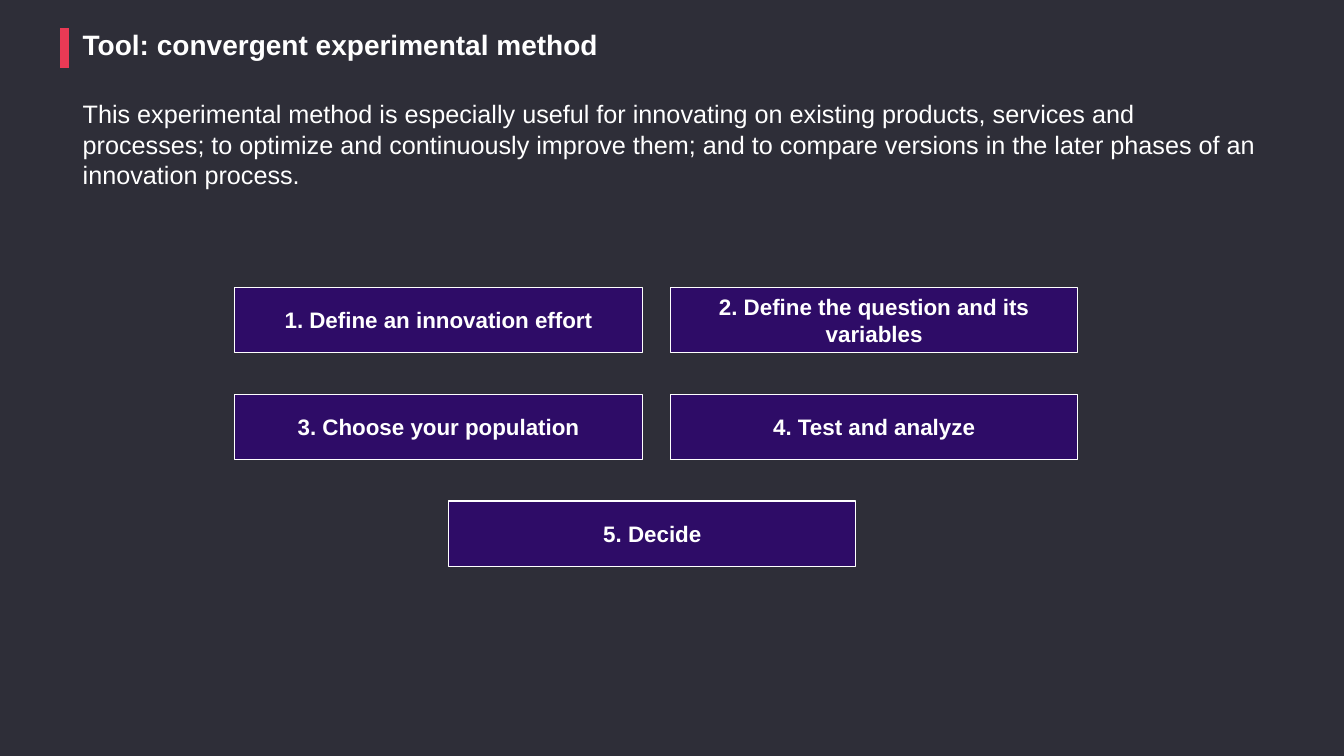
from dataclasses import dataclass

from lxml.etree import SubElement
from pptx import Presentation
from pptx.dml.color import RGBColor
from pptx.enum.shapes import MSO_CONNECTOR, MSO_SHAPE
from pptx.enum.text import MSO_ANCHOR as ANCHOR, MSO_AUTO_SIZE as AUTO, PP_ALIGN as ALIGN
from pptx.oxml.ns import qn
from pptx.util import Inches, Pt

BACKGROUND, ACCENT, PURPLE, WHITE = "2E2E38", "EA3A55", "2E0C67", "FFFFFF"
STEP_W, STEP_H = 4.04, 0.65
LEFT_COL, RIGHT_COL, MIDDLE = 2.33, 6.65, 4.45
FIRST_ROW, ROW_PITCH = 2.85, 1.06


@dataclass
class Step:
    text: str
    left: float
    row: int


STEPS = [
    Step("1. Define an innovation effort", LEFT_COL, 0),
    Step("2. Define the question and its variables", RIGHT_COL, 0),
    Step("3. Choose your population", LEFT_COL, 1),
    Step("4. Test and analyze", RIGHT_COL, 1),
    Step("5. Decide", MIDDLE, 2),
]


def paint(color_format, color: str) -> None:
    color_format.rgb = RGBColor.from_string(color)


def fill_solid(fill, color: str) -> None:
    fill.solid()
    paint(fill.fore_color, color)


def write(sp, text: str, *, size: float, bold: bool = False,
          align=ALIGN.LEFT, anchor=ANCHOR.TOP) -> None:
    tf = sp.text_frame
    tf.word_wrap = True
    tf.auto_size = AUTO.NONE
    tf.vertical_anchor = anchor
    p = tf.paragraphs[0]
    p.alignment = align
    p.space_before = Pt(0)
    r = p.add_run()
    r.text = text
    r.font.name = "Arial"
    r.font.size = Pt(size)
    r.font.bold = bold
    paint(r.font.color, WHITE)


def place(sp, left: float, top: float, width: float, height: float) -> None:
    sp.left, sp.top = Inches(left), Inches(top)
    sp.width, sp.height = Inches(width), Inches(height)


def remove_bullet(p) -> None:
    pPr = p._p.get_or_add_pPr()
    pPr.set("marL", "0")
    pPr.set("indent", "0")
    SubElement(pPr, qn("a:buNone"))


def add_accent_bar(s) -> None:
    bar = s.shapes.add_connector(MSO_CONNECTOR.STRAIGHT, Inches(0.64), Inches(0.28),
                                 Inches(0.64), Inches(0.67))
    paint(bar.line.color, ACCENT)
    bar.line.width = Pt(6)
    SubElement(bar._element.spPr, qn("a:effectLst"))


def add_step(s, step: Step) -> None:
    sp = s.shapes.add_shape(MSO_SHAPE.RECTANGLE, 0, 0, 0, 0)
    place(sp, step.left, FIRST_ROW + step.row * ROW_PITCH, STEP_W, STEP_H)
    sp.shadow.inherit = False
    fill_solid(sp.fill, PURPLE)
    paint(sp.line.color, WHITE)
    sp.line.width = Pt(0.75)
    write(sp, step.text, size=16, bold=True, align=ALIGN.CENTER, anchor=ANCHOR.MIDDLE)


def main() -> None:
    prs = Presentation()
    prs.slide_width, prs.slide_height = Inches(13.33), Inches(7.5)
    s = prs.slides.add_slide(prs.slide_layouts[1])
    fill_solid(s.background.fill, BACKGROUND)
    add_accent_bar(s)

    title = s.shapes.title
    place(title, 0.72, 0.22, 7.78, 0.44)
    write(title, "Tool: convergent experimental method", size=20, bold=True)

    body = s.placeholders[1]
    place(body, 0.72, 0.93, 11.86, 1.01)
    remove_bullet(body.text_frame.paragraphs[0])
    write(body, "This experimental method is especially useful for innovating on existing "
                "products, services and processes; to optimize and continuously improve them; "
                "and to compare versions in the later phases of an innovation process.", size=18)

    for step in STEPS:
        add_step(s, step)
    prs.save("out.pptx")


if __name__ == "__main__":
    main()
